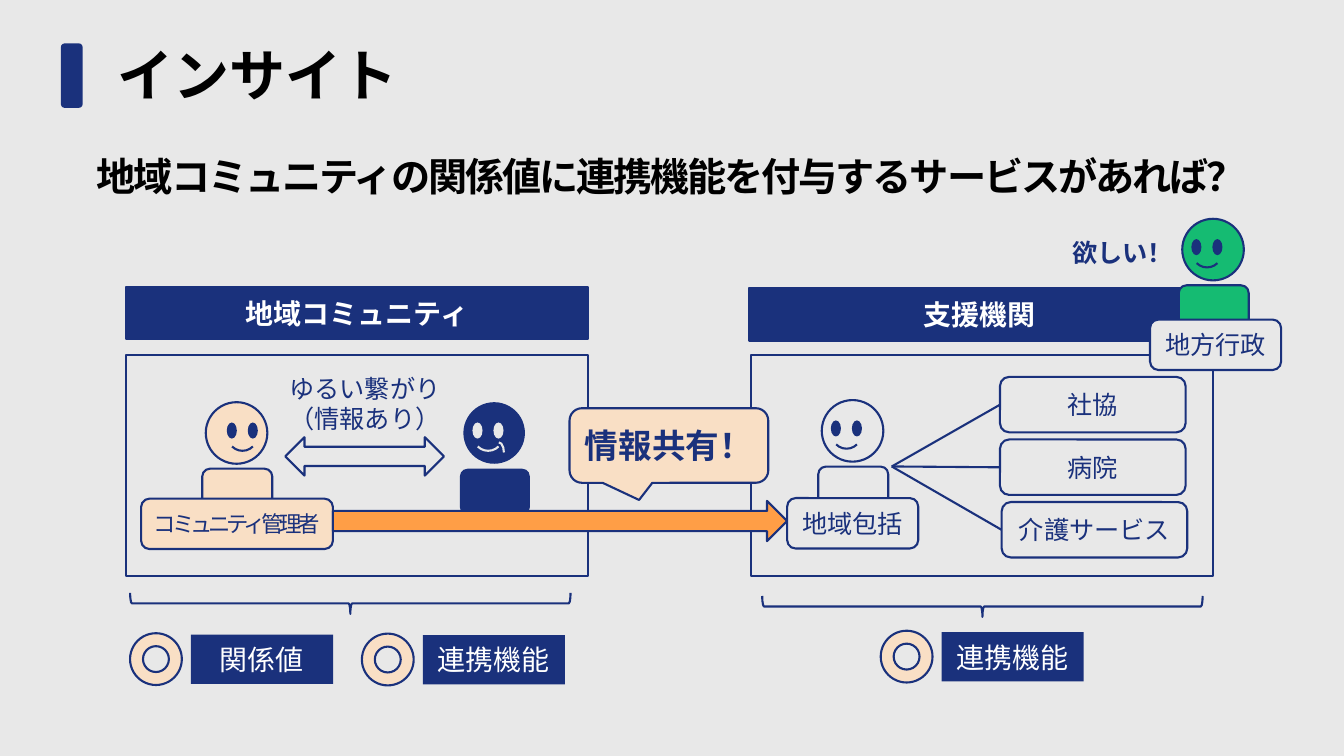
from pptx import Presentation
from pptx.dml.color import RGBColor
from pptx.enum.shapes import MSO_CONNECTOR, MSO_SHAPE
from pptx.enum.text import MSO_ANCHOR, PP_ALIGN
from pptx.oxml.ns import qn
from pptx.util import Pt

COLORS = {
    "background": "E8E8E8",
    "navy": "1A317C",
    "peach": "F9DFC5",
    "orange": "FF9E46",
    "green": "15BB72",
    "white": "FFFFFF",
    "black": "000000",
}
JAPANESE_FONT = "Noto Sans CJK JP"
LINE_WIDTH = 1.5


def color(name):
    """Return the named colour."""
    return RGBColor.from_string(COLORS[name])


def write_text(shape, text, size, font_color, bold=False, spacing=0,
               font=JAPANESE_FONT, align=PP_ALIGN.CENTER, line_spacing=None):
    """Fill a shape with uniformly formatted text."""
    text_frame = shape.text_frame
    text_frame.text = text
    for paragraph in text_frame.paragraphs:
        paragraph.alignment = align
        paragraph.line_spacing = line_spacing
        for run in paragraph.runs:
            run.font.name = font
            run.font.size = Pt(size)
            run.font.bold = bold
            run.font.color.rgb = color(font_color)
            properties = run.font._element
            properties.makeelement(qn("a:ea"))
            east_asian = properties.makeelement(qn("a:ea"), {"typeface": font})
            properties.find(qn("a:latin")).addnext(east_asian)
            if spacing:
                properties.set("spc", str(int(spacing * 100)))


def add_text(slide, box, text, size, font_color, wrap=False, **style):
    """Add a text box."""
    shape = slide.shapes.add_textbox(*map(Pt, box))
    shape.text_frame.word_wrap = wrap
    write_text(shape, text, size, font_color, **style)


def add_figure(slide, kind, box, fill=None, line="navy", rotation=0):
    """Add a preset shape with flat fill and outline."""
    shape = slide.shapes.add_shape(kind, *map(Pt, box))
    shape.shadow.inherit = False
    shape.rotation = rotation
    if fill:
        shape.fill.solid()
        shape.fill.fore_color.rgb = color(fill)
    else:
        shape.fill.background()
    if line:
        shape.line.color.rgb = color(line)
        shape.line.width = Pt(LINE_WIDTH)
    else:
        shape.line.fill.background()
    return shape


def add_label(slide, box, text, size=18, kind=MSO_SHAPE.ROUNDED_RECTANGLE,
              fill="background", line="navy", font_color="navy", **style):
    """Add a shape with centred text."""
    shape = add_figure(slide, kind, box, fill, line)
    shape.text_frame.word_wrap = True
    shape.text_frame.vertical_anchor = MSO_ANCHOR.MIDDLE
    write_text(shape, text, size, font_color, **style)
    return shape


def add_person(slide, left, top, fill, line="navy", features="navy", face=6.5):
    """Add a smiling person whose face starts at the given offset."""
    add_figure(slide, MSO_SHAPE.OVAL, (left, top, 44, 44), fill, line)
    add_figure(slide, MSO_SHAPE.ROUNDED_RECTANGLE, (left - 2.5, top + 47.5, 50, 33), fill, line)
    for eye in (face, face + 15):
        add_figure(slide, MSO_SHAPE.OVAL, (left + eye, top + 14.5, 7.2, 11.5), features, None)
    add_figure(slide, MSO_SHAPE.ARC, (left + face + 0.7, top + 13.7, 21, 21),
               line=features, rotation=135)


def add_panel(slide, left, heading_left, heading_top, heading):
    """Add a headed frame."""
    add_label(slide, (heading_left, heading_top, 330, 37.5), heading, 20, MSO_SHAPE.RECTANGLE,
              "navy", font_color="white", bold=True)
    add_figure(slide, MSO_SHAPE.RECTANGLE, (left, 253.5, 330, 157.7))


def add_brace(slide, center, middle):
    """Add a brace that points down."""
    add_figure(slide, MSO_SHAPE.RIGHT_BRACE, (center - 7.5, middle - 157.3, 15, 314.6), rotation=90)


def add_asset(slide, left, top, text):
    """Add a ring and its tag."""
    add_figure(slide, MSO_SHAPE.DONUT, (left, top, 37, 37), "peach")
    add_label(slide, (left + 43.5, top + 1, 101.5, 35.3), text, 20, MSO_SHAPE.RECTANGLE,
              "navy", None, "white")


def add_link(slide, start, end):
    """Add a straight line."""
    connector = slide.shapes.add_connector(MSO_CONNECTOR.STRAIGHT, *map(Pt, start + end))
    connector.line.color.rgb = color("navy")
    connector.line.width = Pt(LINE_WIDTH)
    properties = connector._element.spPr
    properties.append(properties.makeelement(qn("a:effectLst")))


def add_heading(slide):
    """Add the title and the key question."""
    add_figure(slide, MSO_SHAPE.ROUNDED_RECTANGLE, (43.5, 31, 15.5, 46), "navy", None)
    add_text(slide, (77, 31, 816.5, 60.5), "インサイト", 40, "black", wrap=True, bold=True,
             font="Arial", align=PP_ALIGN.LEFT, line_spacing=0.9)
    add_text(slide, (21, 108.7, 916.5, 45.4),
             "地域コミュニティの関係値に連携機能を付与するサービスがあれば？", 28, "black",
             wrap=True, bold=True, spacing=-1.5, font="Arial", line_spacing=0.9)


def add_community(slide):
    """Add the local community side."""
    add_panel(slide, 90, 90, 204.7, "地域コミュニティ")
    add_person(slide, 147, 287.3, "peach", face=15)
    add_person(slide, 331, 287.3, "navy", None, "background")
    add_figure(slide, MSO_SHAPE.ARC, (352.8, 316, 7.2, 14.4), line="background")
    add_text(slide, (198.7, 262.8, 123.8, 51), "ゆるい繋がり\n（情報あり）", 18, "navy")
    add_figure(slide, MSO_SHAPE.LEFT_RIGHT_ARROW, (203.8, 312.3, 113.3, 27.4))
    add_label(slide, (100.8, 356.2, 137, 36), "コミュニティ管理者", 16, fill="peach", spacing=-3)
    add_brace(slide, 250.2, 431)
    add_asset(slide, 92.9, 452.3, "関係値")
    add_asset(slide, 258.5, 452.6, "連携機能")


def add_support(slide):
    """Add the support organisations side."""
    add_panel(slide, 536.4, 535, 205.7, "支援機関")
    add_person(slide, 587, 285.8, "background")
    add_label(slide, (562.3, 355.8, 93.6, 36), "地域包括")
    for index, service in enumerate(("社協", "病院", "介護サービス")):
        left = 715.5 if index == 2 else 714.3
        top = 269.2 + 44.7 * index
        add_link(slide, (637, 333.2), (left, top + 19.9))
        add_label(slide, (left, top, 132.6, 39.6), service)
    add_brace(slide, 701.7, 433.2)
    add_asset(slide, 629.1, 450.5, "連携機能")


def add_government(slide):
    """Add the local government that wants the service."""
    add_person(slide, 844.5, 156.3, "green")
    add_label(slide, (821.5, 228.3, 93.6, 36), "地方行政")
    add_text(slide, (758.9, 165.6, 87, 29), "欲しい！", 18, "navy", bold=True, align=PP_ALIGN.LEFT)


def add_sharing(slide):
    """Add the arrow and callout that join both sides."""
    add_figure(slide, MSO_SHAPE.RIGHT_ARROW, (237.8, 357.8, 324.5, 28.8), "orange")
    callout = add_label(slide, (406.8, 291.6, 142, 53.3), "情報共有！", 24,
                        MSO_SHAPE.ROUNDED_RECTANGULAR_CALLOUT, "peach", bold=True)
    callout.adjustments[0] = -0.15
    callout.adjustments[1] = 0.73


def main():
    """Build the slide."""
    presentation = Presentation()
    presentation.slide_width = Pt(960)
    presentation.slide_height = Pt(540)
    slide = presentation.slides.add_slide(presentation.slide_layouts[6])
    slide.background.fill.solid()
    slide.background.fill.fore_color.rgb = color("background")
    add_heading(slide)
    add_community(slide)
    add_support(slide)
    add_sharing(slide)
    add_government(slide)
    presentation.save("out.pptx")


if __name__ == "__main__":
    main()
